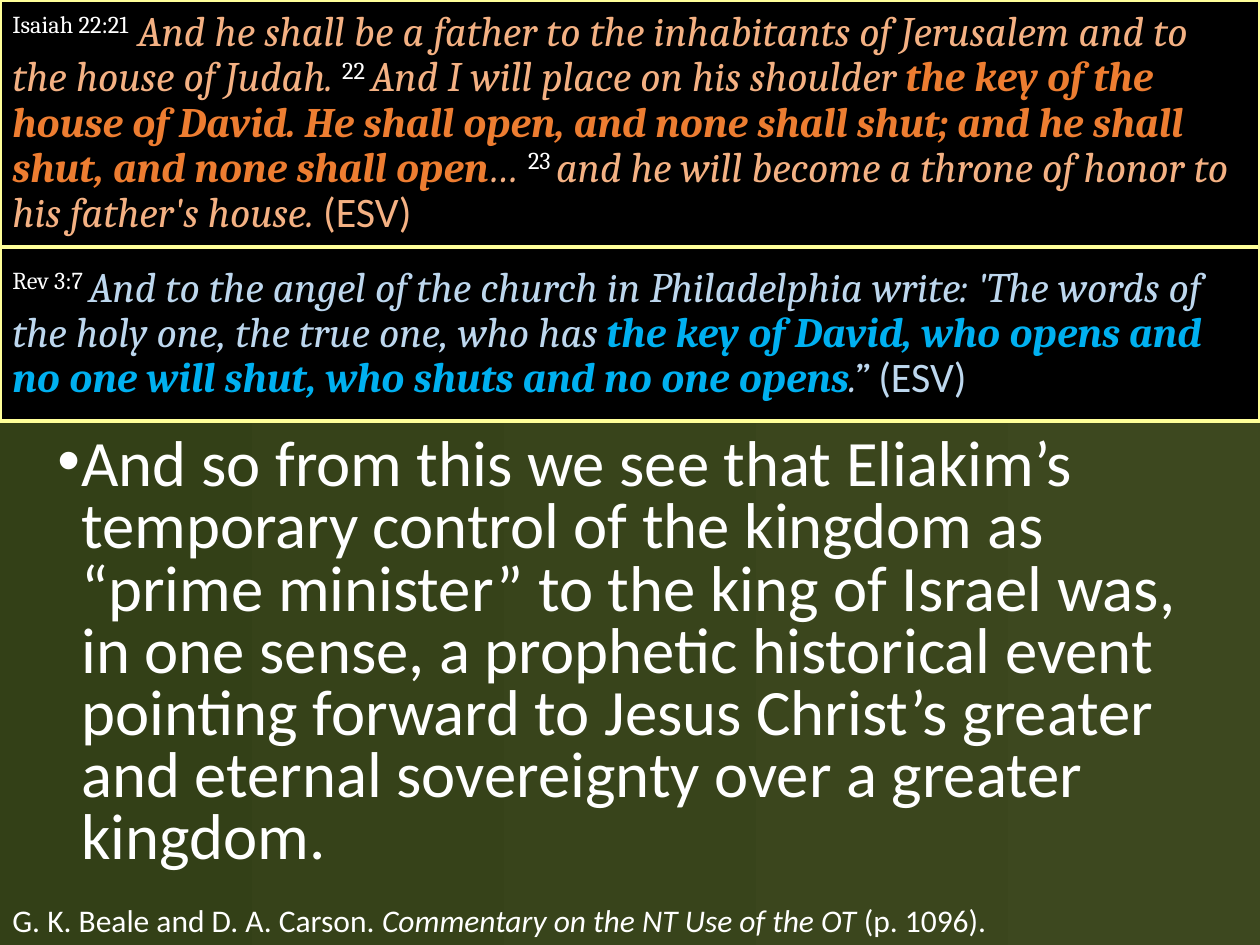
import pptx
import pptx.dml.color
import pptx.enum.shapes
import pptx.enum.text
import pptx.oxml
import pptx.oxml.ns
import pptx.util

EMU_PER_PX = 914400 / 126
WHITE = "FFFFFF"
VERSE_REF = {"name": "Cambria", "size": 24, "color": WHITE, "baseline": 30}


def px(length):
    """Turn a length in px into EMU."""
    return pptx.util.Emu(round(length * EMU_PER_PX))


def paint(color_format, hex_color):
    """Set a colour from a hex string."""
    color_format.rgb = pptx.dml.color.RGBColor.from_string(hex_color)


def set_values(target, values):
    """Set attributes of an object from a dict."""
    for attribute, value in values.items():
        setattr(target, attribute, value)


def add_passage(paragraph, passage):
    """Add (text, format) runs to a paragraph."""
    for words, style in passage:
        run = paragraph.add_run()
        run.text = words
        font = dict(style)
        paint(run.font.color, font.pop("color"))
        baseline = font.pop("baseline", 0)
        if baseline:
            run._r.get_or_add_rPr().set("baseline", str(baseline * 1000))
        font["size"] = pptx.util.Pt(font["size"])
        set_values(run.font, font)


def fill_frame(shape, passage, anchor, layout):
    """Write a passage into a shape and return its paragraph."""
    set_values(shape.text_frame, {"word_wrap": True, "vertical_anchor": anchor})
    paragraph = shape.text_frame.paragraphs[0]
    set_values(paragraph, {"alignment": pptx.enum.text.PP_ALIGN.LEFT, **layout})
    add_passage(paragraph, passage)
    return paragraph


def add_background(slide):
    """Fill the background with an olive gradient."""
    fill = slide.background.fill
    fill.gradient()
    fill.gradient_angle = 180
    for stop, hex_color in zip(fill.gradient_stops, ("3D481F", "334017")):
        paint(stop.color, hex_color)


def add_scripture(slide, box, passage):
    """Place a black, yellow-edged scripture panel in a box."""
    panel = slide.shapes.add_shape(
        pptx.enum.shapes.MSO_SHAPE.RECTANGLE, *map(px, box))
    panel.shadow.inherit = False
    panel.fill.solid()
    paint(panel.fill.fore_color, "000000")
    paint(panel.line.color, "FFFF99")
    panel.line.width = pptx.util.Pt(2)
    fill_frame(panel, passage, pptx.enum.text.MSO_ANCHOR.MIDDLE,
               {"line_spacing": 0.9, "space_before": pptx.util.Pt(7.5)})


def add_conclusion(slide, box, passage):
    """Place the bulleted conclusion in a box."""
    conclusion = slide.shapes.add_textbox(*map(px, box))
    paragraph = fill_frame(
        conclusion, passage, pptx.enum.text.MSO_ANCHOR.TOP,
        {"line_spacing": 0.8, "space_before": pptx.util.Pt(7.5)})
    properties = paragraph._p.get_or_add_pPr()
    indent = px(24)
    properties.set("marL", str(indent))
    properties.set("indent", str(-indent))
    namespace = pptx.oxml.ns.nsdecls("a")
    for bullet in ('buFont {} typeface="Arial"', 'buChar {} char="•"'):
        properties.append(pptx.oxml.parse_xml(f"<a:{bullet.format(namespace)}/>"))


def add_citation(slide, box, passage):
    """Place the source citation in a box."""
    citation = slide.shapes.add_textbox(*map(px, box))
    fill_frame(citation, passage, pptx.enum.text.MSO_ANCHOR.TOP, {})


def verse_styles(plain_color, key_color):
    """Return the plain, emphasised and translation formats of a verse."""
    plain = {"name": "Cambria", "size": 24, "color": plain_color, "italic": True}
    key = {**plain, "color": key_color, "bold": True}
    translation = {**plain, "name": "Calibri", "italic": False}
    return plain, key, translation


def main():
    """Build the slide and save it."""
    deck = pptx.Presentation()
    set_values(deck, {"slide_width": px(1260), "slide_height": px(945)})
    slide = deck.slides.add_slide(deck.slide_layouts[6])
    add_background(slide)

    source = {"name": "Calibri", "size": 18, "color": WHITE}
    add_citation(slide, (0, 895, 1260, 50), [
        ("G. K. Beale and D. A. Carson. ", source),
        ("Commentary on the NT Use of the OT ", {**source, "italic": True}),
        ("(p. 1096).", source),
    ])

    plain, key, translation = verse_styles("F4B183", "ED7D31")
    add_scripture(slide, (0, 0, 1260, 247), [
        ("Isaiah 22:21", VERSE_REF),
        (" And he shall be a father to the inhabitants of Jerusalem and to "
         "the house of Judah. ", plain),
        ("22 ", VERSE_REF),
        ("And I will place on his shoulder ", plain),
        ("the key of the house of David. He shall open, and none shall shut; "
         "and he shall shut, and none shall open", key),
        ("… ", plain),
        ("23 ", VERSE_REF),
        ("and he will become a throne of honor to his father's house. ", plain),
        ("(ESV)", translation),
    ])

    plain, key, translation = verse_styles("BDD7EE", "00B0F0")
    add_scripture(slide, (0, 247, 1260, 174), [
        ("Rev 3:7 ", VERSE_REF),
        ("And to the angel of the church in Philadelphia write: 'The words of "
         "the holy one, the true one, who has ", plain),
        ("the key of David, who opens and no one will shut, who shuts and "
         "no one opens", key),
        (".” ", plain),
        ("(ESV)", translation),
    ])

    add_conclusion(slide, (45, 431, 1183, 467), [
        ("And so from this we see that Eliakim’s temporary control of the "
         "kingdom as “prime minister” to the king of Israel was, in one sense, "
         "a prophetic historical event pointing forward to Jesus Christ’s "
         "greater and eternal sovereignty over a greater kingdom.",
         {"name": "Calibri", "size": 37, "color": WHITE}),
    ])
    deck.save("out.pptx")


if __name__ == "__main__":
    main()
